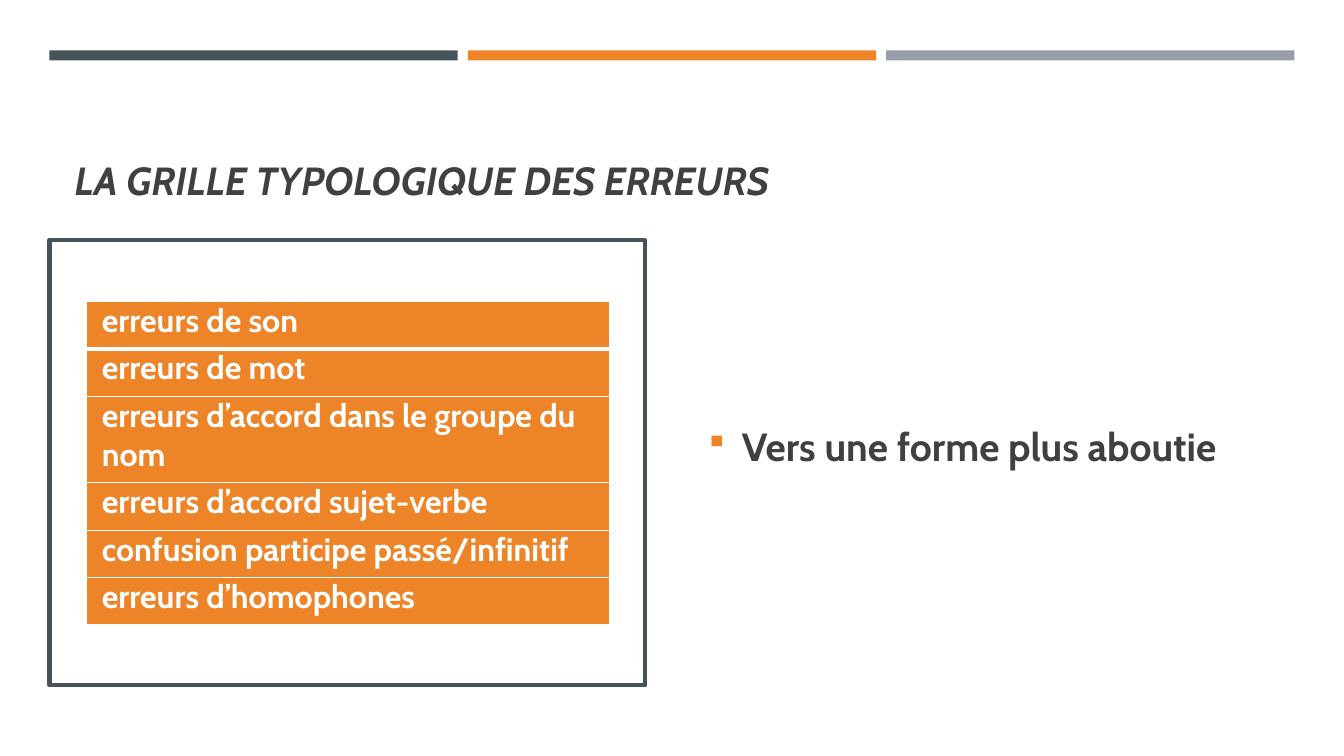
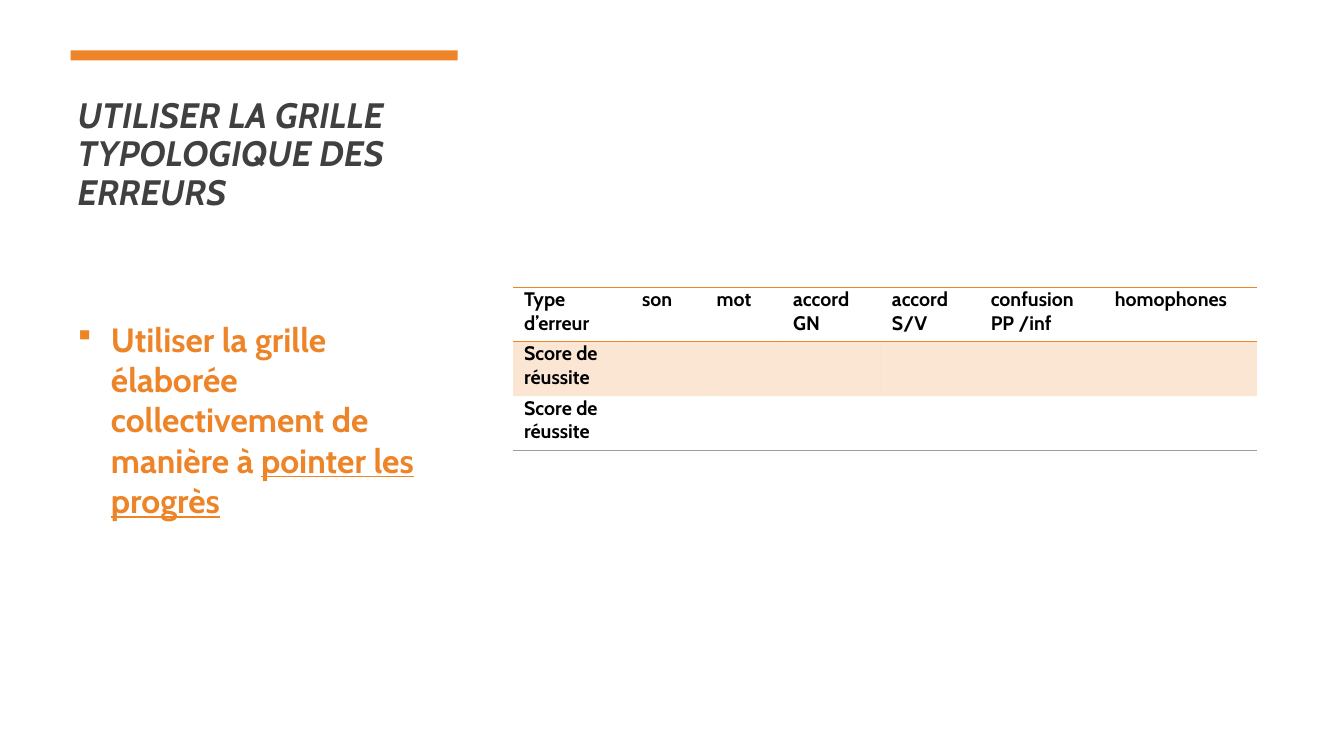
from dataclasses import dataclass

from lxml import etree
from pptx import Presentation
from pptx.dml.color import RGBColor
from pptx.enum.shapes import MSO_SHAPE
from pptx.enum.text import MSO_ANCHOR, MSO_AUTO_SIZE, PP_ALIGN
from pptx.oxml.ns import qn
from pptx.presentation import Presentation as Deck
from pptx.shapes.autoshape import Shape
from pptx.slide import Slide
from pptx.table import _Cell as Cell
from pptx.text.text import _Paragraph as Paragraph
from pptx.util import Inches, Pt

RECTANGLE = MSO_SHAPE.RECTANGLE
LEFT = PP_ALIGN.LEFT
TOP, MIDDLE, BOTTOM = MSO_ANCHOR.TOP, MSO_ANCHOR.MIDDLE, MSO_ANCHOR.BOTTOM
NO_AUTOFIT = MSO_AUTO_SIZE.NONE

COLORS = {
    "orange": "ED8428",
    "slate": "465359",
    "grey": "969FA7",
    "text": "404040",
    "black": "000000",
    "white": "FFFFFF",
}
FONT = "Cabin"
PLAIN_TABLE_STYLE = "{2D5ABB26-0587-4C30-8999-92F81FD0307C}"
SLIDE_WIDTH, SLIDE_HEIGHT = Inches(13.33), Inches(7.5)
TITLE_AND_CONTENT = 1
HANGING_INDENT = Inches(0.33)
BAR_TOP, BAR_HEIGHT, BAR_GAP = 6.67, 1.33, 0.75


def share_x(percent: float) -> int:
    return round(SLIDE_WIDTH * percent / 100)


def share_y(percent: float) -> int:
    return round(SLIDE_HEIGHT * percent / 100)


@dataclass(frozen=True)
class Box:
    """A frame in percent of the slide's width and height."""
    left: float
    top: float
    width: float
    height: float

    def emu(self) -> tuple[int, int, int, int]:
        return (share_x(self.left), share_y(self.top),
                share_x(self.width), share_y(self.height))


@dataclass(frozen=True)
class TextStyle:
    size: float
    color: str
    italic: bool = False
    underline: bool = False


@dataclass(frozen=True)
class Border:
    color: str
    points: float


@dataclass(frozen=True)
class CellStyle:
    text: TextStyle
    margin: float
    borders: dict[str, Border]
    fill: str | None = None
    opacity: int = 100


@dataclass(frozen=True)
class TableRow:
    height: float
    texts: list[str]
    style: CellStyle


def rgb(name: str) -> RGBColor:
    return RGBColor.from_string(COLORS[name])


def add_run(para: Paragraph, text: str, style: TextStyle) -> None:
    run = para.add_run()
    run.text = text
    font = run.font
    font.name, font.size, font.bold = FONT, Pt(style.size), True
    font.italic, font.underline = style.italic, style.underline
    font.color.rgb = rgb(style.color)


def add_rectangle(slide: Slide, box: Box, fill: str) -> Shape:
    shape = slide.shapes.add_shape(RECTANGLE, *box.emu())
    shape.shadow.inherit = False
    shape.fill.solid()
    shape.fill.fore_color.rgb = rgb(fill)
    shape.line.fill.background()
    return shape


def add_bars(slide: Slide, left: float, width: float, colors: list[str]) -> None:
    for index, color in enumerate(colors):
        bar_left = left + index * (width + BAR_GAP)
        add_rectangle(slide, Box(bar_left, BAR_TOP, width, BAR_HEIGHT), color)


def prepare_placeholder(shape: Shape, box: Box, anchor: MSO_ANCHOR) -> Paragraph:
    """Move the placeholder and return its first paragraph, left aligned."""
    shape.left, shape.top, shape.width, shape.height = box.emu()
    frame = shape.text_frame
    frame.word_wrap, frame.auto_size = True, NO_AUTOFIT
    frame.vertical_anchor = anchor
    para = frame.paragraphs[0]
    para.alignment = LEFT
    para.space_before = Pt(0)
    return para


def set_title(slide: Slide, box: Box, text: str, size: float,
              line_spacing: float = 1.0) -> None:
    para = prepare_placeholder(slide.shapes.title, box, BOTTOM)
    para.line_spacing = line_spacing
    add_run(para, text, TextStyle(size, "text", italic=True))


def add_square_bullet(para: Paragraph) -> None:
    properties = para._p.get_or_add_pPr()
    properties.set("marL", str(HANGING_INDENT))
    properties.set("indent", str(-HANGING_INDENT))
    color = etree.SubElement(properties, qn("a:buClr"))
    etree.SubElement(color, qn("a:srgbClr"), val=COLORS["orange"])
    etree.SubElement(properties, qn("a:buSzPct"), val="92000")
    etree.SubElement(properties, qn("a:buFont"), typeface="Wingdings")
    etree.SubElement(properties, qn("a:buChar"), char="§")


def set_bullet(slide: Slide, box: Box, runs: list[tuple[str, TextStyle]]) -> None:
    para = prepare_placeholder(slide.placeholders[1], box, MIDDLE)
    add_square_bullet(para)
    for text, style in runs:
        add_run(para, text, style)


def set_borders(cell: Cell, borders: dict[str, Border]) -> None:
    properties = cell._tc.get_or_add_tcPr()
    for side in "LRTB":
        line = etree.SubElement(properties, qn(f"a:ln{side}"))
        border = borders.get(side)
        if border is None:
            etree.SubElement(line, qn("a:noFill"))
            continue
        line.set("w", str(Pt(border.points)))
        fill = etree.SubElement(line, qn("a:solidFill"))
        etree.SubElement(fill, qn("a:srgbClr"), val=COLORS[border.color])


def set_cell(cell: Cell, text: str, style: CellStyle) -> None:
    set_borders(cell, style.borders)
    cell.margin_left = cell.margin_right = Inches(style.margin)
    cell.margin_top = cell.margin_bottom = 0
    cell.vertical_anchor = TOP
    if style.fill is None:
        cell.fill.background()
    else:
        cell.fill.solid()
        cell.fill.fore_color.rgb = rgb(style.fill)
        if style.opacity < 100:
            color = cell._tc.tcPr.find(qn("a:solidFill"))[0]
            etree.SubElement(color, qn("a:alpha"), val=str(style.opacity * 1000))
    if text:
        add_run(cell.text_frame.paragraphs[0], text, style.text)


def add_styled_table(slide: Slide, left: float, top: float,
                     widths: list[float], rows: list[TableRow]) -> None:
    box = Box(left, top, sum(widths), sum(row.height for row in rows))
    table = slide.shapes.add_table(len(rows), len(widths), *box.emu()).table
    table.first_row = table.horz_banding = False
    table._tbl.tblPr.find(qn("a:tableStyleId")).text = PLAIN_TABLE_STYLE
    for column, width in zip(table.columns, widths):
        column.width = share_x(width)
    for row_index, row in enumerate(rows):
        table.rows[row_index].height = share_y(row.height)
        for column_index, text in enumerate(row.texts):
            set_cell(table.cell(row_index, column_index), text, row.style)


def build_error_grid(deck: Deck) -> None:
    slide = deck.slides.add_slide(deck.slide_layouts[TITLE_AND_CONTENT])
    set_title(slide, Box(4.8, 10.27, 90.45, 17.33),
              "LA GRILLE TYPOLOGIQUE DES ERREURS", 28)
    add_bars(slide, 3.68, 30.38, ["slate", "orange", "grey"])
    frame = add_rectangle(slide, Box(3.68, 31.73, 44.33, 58.93), "white")
    frame.line.color.rgb = rgb("slate")
    frame.line.width = Pt(3)
    set_bullet(slide, Box(51.98, 31.73, 43.28, 54.53),
               [("Vers une forme plus aboutie", TextStyle(28, "text"))])

    thin, thick = Border("white", 1), Border("white", 3)
    errors = [
        "erreurs de son",
        "erreurs de mot",
        "erreurs d’accord dans le groupe du nom",
        "erreurs d’accord sujet-verbe",
        "confusion participe passé/infinitif",
        "erreurs d’homophones",
    ]
    single_line, two_lines = 6.27, 11.47
    rows = []
    for index, error in enumerate(errors):
        borders = {"L": thin, "R": thin,
                   "T": thick if index == 1 else thin,
                   "B": thick if index == 0 else thin}
        style = CellStyle(TextStyle(23, "white"), 0.15, borders, "orange")
        rows.append(TableRow(two_lines if index == 2 else single_line, [error], style))
    add_styled_table(slide, 6.45, 39.87, [38.93], rows)


def build_score_table(deck: Deck) -> None:
    slide = deck.slides.add_slide(deck.slide_layouts[TITLE_AND_CONTENT])
    set_title(slide, Box(5.03, 10.27, 29.25, 18.53),
              "UTILISER LA GRILLE TYPOLOGIQUE DES ERREURS", 25.2, 0.9)
    add_bars(slide, 5.25, 28.8, ["orange"])
    set_bullet(slide, Box(5.03, 34.13, 29.25, 42.67), [
        ("Utiliser la grille élaborée collectivement de manière à ",
         TextStyle(24, "orange")),
        ("pointer les progrès", TextStyle(24, "orange", underline=True)),
    ])

    text, margin, row_height = TextStyle(14, "black"), 0.11, 7.2
    rule, closing_rule = Border("orange", 1), Border("grey", 1)
    header = CellStyle(text, margin, {"T": rule, "B": rule})
    tinted = CellStyle(text, margin, {"T": rule}, "orange", 20)
    plain = CellStyle(text, margin, {"B": closing_rule})
    headings = ["Type d’erreur", "son", "mot", "accord GN", "accord S/V",
                "confusion PP /inf", "homophones"]
    scores = ["Score de réussite"] + [""] * (len(headings) - 1)
    add_styled_table(
        slide, 38.17, 38, [8.78, 5.55, 5.7, 7.35, 7.35, 9.23, 11.4],
        [TableRow(row_height, headings, header),
         TableRow(row_height, scores, tinted),
         TableRow(row_height, scores, plain)])


def main() -> None:
    deck = Presentation()
    deck.slide_width, deck.slide_height = SLIDE_WIDTH, SLIDE_HEIGHT
    build_error_grid(deck)
    build_score_table(deck)
    deck.save("out.pptx")


if __name__ == "__main__":
    main()
